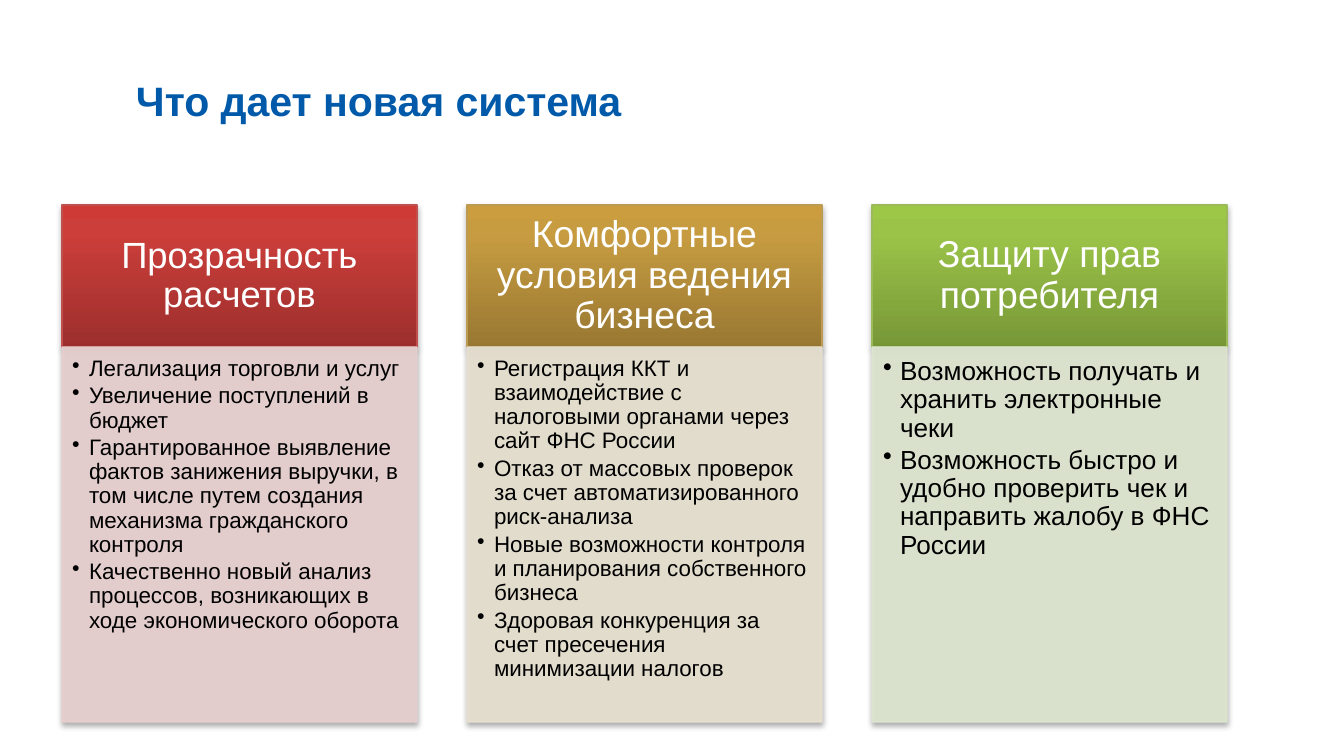
from copy import deepcopy

from lxml import etree
from pptx import Presentation
from pptx.dml.color import RGBColor
from pptx.enum.shapes import MSO_SHAPE as Shape
from pptx.enum.text import MSO_ANCHOR as Anchor, PP_ALIGN as Align
from pptx.oxml import parse_xml
from pptx.oxml.ns import nsdecls, qn
from pptx.util import Emu, Pt

PX = 914400 / 134.4
SHADOW = (
    f'<a:effectLst {nsdecls("a")}>'
    '<a:outerShdw blurRad="40000" dist="23000" dir="5400000" rotWithShape="0">'
    '<a:srgbClr val="000000"><a:alpha val="35000"/></a:srgbClr>'
    '</a:outerShdw></a:effectLst>'
)


def px(*lengths):
    return [Emu(round(length * PX)) for length in lengths]


def add_text(area, insets, texts, size, color, anchor=Anchor.TOP, bullets=False):
    """Add a wrapped text box with one paragraph per text; return its paragraphs."""
    frame = page.shapes.add_textbox(*px(*area)).text_frame
    frame.word_wrap = True
    frame.vertical_anchor = anchor
    (frame.margin_left, frame.margin_top,
     frame.margin_right, frame.margin_bottom) = px(*insets)
    for index, text in enumerate(texts):
        para = frame.add_paragraph() if index else frame.paragraphs[0]
        if bullets:
            props = para._p.get_or_add_pPr()
            indent = px(17)[0]
            props.set("marL", str(indent))
            props.set("indent", str(-indent))
            etree.SubElement(props, qn("a:buChar")).set("char", "•")
        span = para.add_run()
        span.text = text
        span.font.name = "Arial"
        span.font.size = Pt(size)
        span.font.color.rgb = RGBColor.from_string(color)
    return frame.paragraphs


deck = Presentation()
deck.slide_width, deck.slide_height = px(1344, 756)
page = deck.slides.add_slide(deck.slide_layouts[6])

title = add_text((125, 55, 1065, 95), (11, 5, 11, 5),
                 ["Что дает новая система"], 22, "005AA9", Anchor.MIDDLE)[0]
title.line_spacing = Pt(23.5)
title.runs[0].font.bold = True

# heading, heading size, gradient from bottom to top, heading line, body fill,
# body size, body insets, bullet texts
columns = [
    ("Прозрачность расчетов", 19.5, ("9C2F2D", "CB3E3A", "CE3B37"),
     "C0504D", "E8D0D0", 12, (10, 10, 12, 13), [
         "Легализация торговли и услуг",
         "Увеличение поступлений в бюджет",
         "Гарантированное выявление фактов занижения выручки, в том числе "
         "путем создания механизма гражданского контроля",
         "Качественно новый анализ процессов, возникающих в ходе "
         "экономического оборота",
     ]),
    ("Комфортные условия ведения бизнеса", 20, ("997832", "C79C41", "CB9D3F"),
     "BD9B53", "E8E1D1", 12, (10, 10, 12, 13), [
         "Регистрация ККТ и взаимодействие с налоговыми органами через "
         "сайт ФНС России",
         "Отказ от массовых проверок за счет автоматизированного риск-анализа",
         "Новые возможности контроля и планирования собственного бизнеса",
         "Здоровая конкуренция за счет пресечения минимизации налогов",
     ]),
    ("Защиту прав потребителя", 20, ("779737", "9BC348", "9DC746"),
     "9BBB59", "DEE7D1", 14, (11, 11, 15, 16), [
         "Возможность получать и хранить электронные чеки",
         "Возможность быстро и удобно проверить чек и направить жалобу "
         "в ФНС России",
     ]),
]

for number, (heading, heading_size, gradient, edge, tint,
             body_size, body_insets, points) in enumerate(columns):
    left = 62 + 405 * number
    head_area = (left, 205, 355, 142)
    body_area = (left, 347, 355, 375)

    head = page.shapes.add_shape(Shape.RECTANGLE, *px(*head_area))
    head.fill.gradient()
    head.fill.gradient_angle = 90
    stop_list = head._element.spPr.find(".//" + qn("a:gsLst"))
    stop_list.append(deepcopy(stop_list[0]))
    for stop, position, color in zip(head.fill.gradient_stops, (0, 0.8, 1), gradient):
        stop.position = position
        stop.color.rgb = RGBColor.from_string(color)

    body = page.shapes.add_shape(Shape.RECTANGLE, *px(*body_area))
    body.fill.solid()
    body.fill.fore_color.rgb = RGBColor.from_string(tint)

    for panel, line_color in ((head, edge), (body, tint)):
        panel.line.color.rgb = RGBColor.from_string(line_color)
        panel.line.width = Pt(0.75)
        panel._element.spPr.append(parse_xml(SHADOW))
    for color in body._element.spPr.findall(".//" + qn("a:solidFill") + "/" + qn("a:srgbClr"))[:2]:
        etree.SubElement(color, qn("a:alpha")).set("val", "90000")

    for para in add_text(head_area, (21, 12, 21, 12), [heading],
                         heading_size, "FFFFFF", Anchor.MIDDLE):
        para.alignment = Align.CENTER
        para.line_spacing = 0.9
    for para in add_text(body_area, body_insets, points,
                         body_size, "000000", bullets=True):
        para.line_spacing = 0.9
        para.space_after = Pt(body_size * 0.15)

deck.save("out.pptx")
